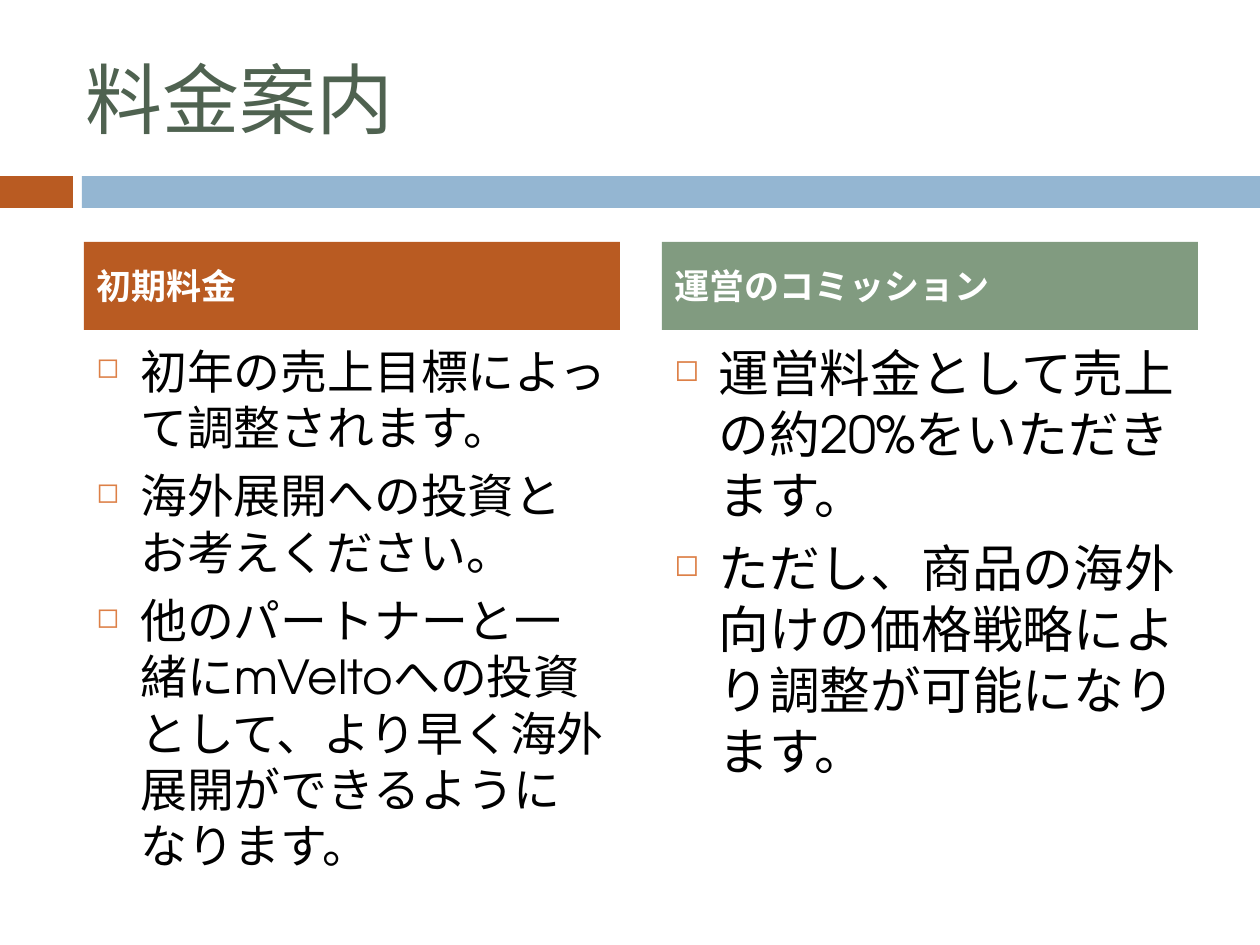
from lxml import etree
from pptx import Presentation
from pptx import util as u
from pptx.dml.color import RGBColor
from pptx.enum import shapes, text
from pptx.oxml.ns import qn

FONT = "TeX Gyre Adventor"
SCALE = 914400 / 126
RUST, BLUE, SAGE, MOSS = "B95B22", "94B6D2", "819B80", "4F6250"
WHITE, BLACK, AMBER = "FFFFFF", "000000", "DD8047"


def px(n):
    return u.Emu(round(n * SCALE))


def color(code):
    return RGBColor.from_string(code)


class Deck:
    """Holds the style and the current slide."""

    def __init__(self, wide, high):
        self.prs = Presentation()
        self.prs.slide_width, self.prs.slide_height = px(wide), px(high)
        self.slide = self.prs.slides.add_slide(self.prs.slide_layouts[6])

    def bar(self, box, fill):
        shape = self.slide.shapes.add_shape(
            shapes.MSO_SHAPE.RECTANGLE, *map(px, box))
        shape.shadow.inherit = False
        shape.fill.solid()
        shape.fill.fore_color.rgb = color(fill)
        shape.line.fill.background()
        return shape

    def letter(self, shape, lines, size, ink, bold=False, middle=True):
        frame = shape.text_frame
        frame.word_wrap = True
        anchor = text.MSO_ANCHOR
        frame.vertical_anchor = anchor.MIDDLE if middle else anchor.TOP
        frame.text = "\n".join(lines)
        for para in frame.paragraphs:
            para.alignment = text.PP_ALIGN.LEFT
            for run in para.runs:
                font = run.font
                font.name, font.size, font.bold = FONT, u.Pt(size), bold
                font.color.rgb = color(ink)
                east = etree.Element(qn("a:ea"), typeface=FONT)
                font._element.find(qn("a:latin")).addnext(east)
        return frame

    def label(self, box, line, size, ink):
        shape = self.slide.shapes.add_textbox(*map(px, box))
        self.letter(shape, [line], size, ink)

    def head(self, box, line, fill):
        self.letter(self.bar(box, fill), [line], 20, WHITE, bold=True)

    def items(self, box, lines, size):
        shape = self.slide.shapes.add_textbox(*map(px, box))
        frame = self.letter(shape, lines, size, BLACK, middle=False)
        for para in frame.paragraphs:
            para.space_before = u.Pt(7)
            props = para._p.get_or_add_pPr()
            props.set("marL", str(px(44)))
            props.set("indent", str(-px(44)))
            tint = etree.SubElement(props, qn("a:buClr"))
            etree.SubElement(tint, qn("a:srgbClr"), val=AMBER)
            etree.SubElement(props, qn("a:buSzPct"), val="60000")
            etree.SubElement(props, qn("a:buChar"), char="◻")


def main():
    deck = Deck(1260, 945)
    deck.bar((0, 176, 73, 32), RUST)
    deck.bar((82, 176, 1178, 32), BLUE)
    deck.label((73, 38, 1124, 120), "料金案内", 44, MOSS)
    columns = [
        ("初期料金", RUST, 26.8, [
            "初年の売上目標によって調整されます。",
            "海外展開への投資とお考えください。",
            "他のパートナーと一緒にmVeltoへの投資として、"
            "より早く海外展開ができるようになります。"]),
        ("運営のコミッション", SAGE, 29, [
            "運営料金として売上の約20%をいただきます。",
            "ただし、商品の海外向けの価格戦略により調整が可能になります。"]),
    ]
    for i, (name, fill, size, lines) in enumerate(columns):
        left = 84 + 578 * i
        deck.head((left, 242, 536, 88), name, fill)
        deck.items((left, 336, 536, 494), lines, size)
    deck.prs.save("out.pptx")


if __name__ == "__main__":
    main()
